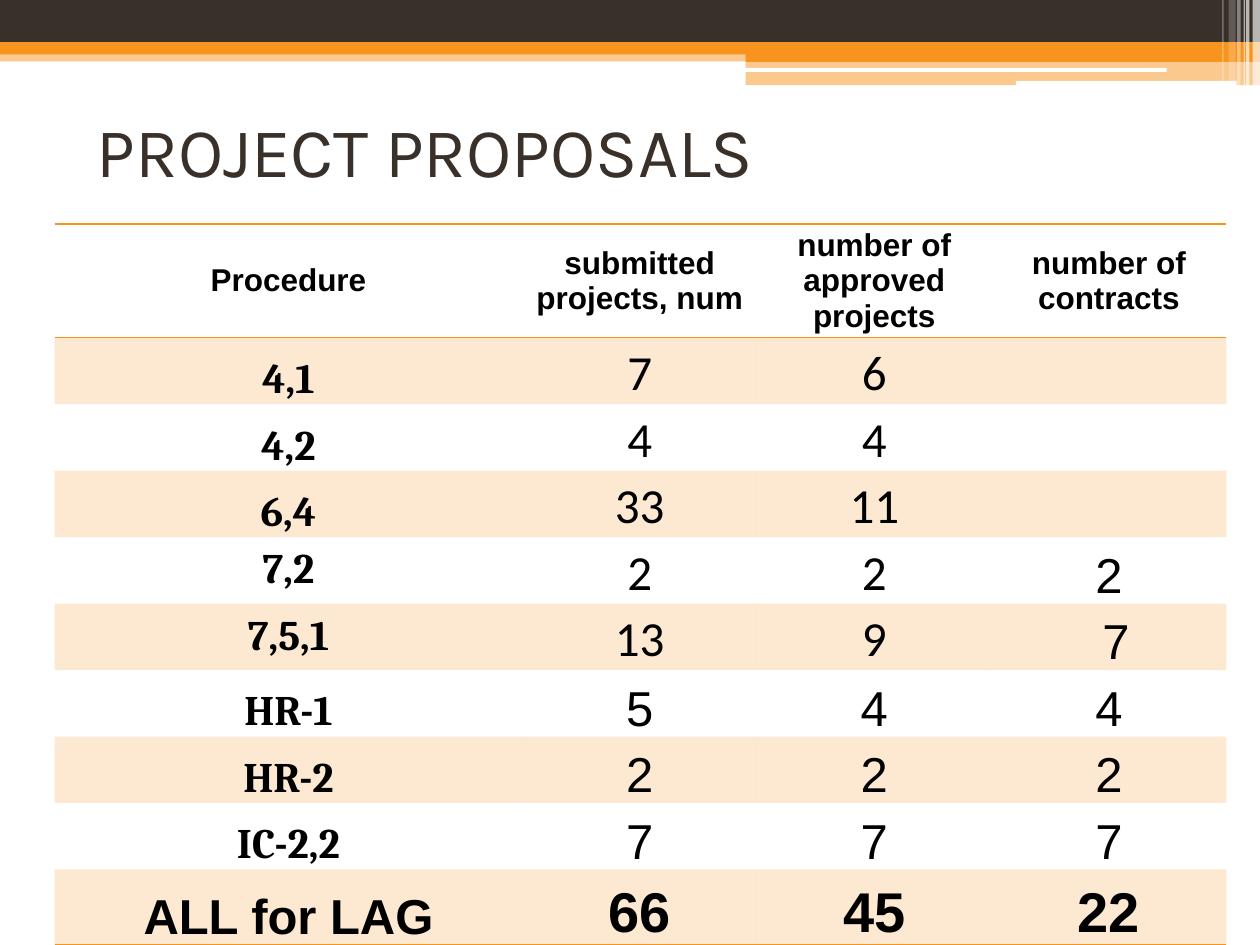
"""Build the project proposals slide with its banner and results table."""
from lxml import etree
from pptx import Presentation
from pptx.dml.color import RGBColor
from pptx.enum.shapes import MSO_SHAPE
from pptx.enum.text import MSO_ANCHOR, PP_ALIGN
from pptx.oxml.ns import qn
from pptx.util import Cm, Pt

RECT, ROUND = MSO_SHAPE.RECTANGLE, MSO_SHAPE.ROUNDED_RECTANGLE
MIDDLE, BOTTOM = MSO_ANCHOR.MIDDLE, MSO_ANCHOR.BOTTOM
CENTER = PP_ALIGN.CENTER
ORANGE = RGBColor(0xF8, 0x93, 0x1D)
BROWN = RGBColor(0x39, 0x30, 0x2A)
WHITE = RGBColor(0xFF, 0xFF, 0xFF)
BLACK = RGBColor(0x00, 0x00, 0x00)
NO_STYLE = "{2D5ABB26-0587-4C30-8999-92F81FD0307C}"


def paint(fill, parent, color, opacity):
    fill.solid()
    fill.fore_color.rgb = color
    if opacity < 100:
        clr = parent.find(qn("a:solidFill"))[0]
        etree.SubElement(clr, qn("a:alpha"), val=str(opacity * 1000))


def add_border(tcPr, position, tag):
    ln = etree.Element(qn(tag), w=str(Pt(1)))
    solid = etree.SubElement(ln, qn("a:solidFill"))
    etree.SubElement(solid, qn("a:srgbClr"), val=str(ORANGE))
    tcPr.insert(position, ln)


prs = Presentation()
prs.slide_width, prs.slide_height = Cm(25.4), Cm(19.05)
s = prs.slides.add_slide(prs.slide_layouts[6])

banner = [
    (RECT, 0, 1.01, 25.4, 0.23, ORANGE, 50),
    (RECT, 0, 0, 25.4, 0.85, BROWN, 100),
    (RECT, 0, 0.85, 25.4, 0.25, ORANGE, 100),
    (RECT, 15.03, 1, 10.37, 0.25, ORANGE, 100),
    (RECT, 15.03, 1.22, 10.37, 0.5, ORANGE, 50),
    (ROUND, 15.01, 1.37, 8.51, 0.08, WHITE, 100),
    (ROUND, 20.48, 1.63, 4.45, 0.1, WHITE, 100),
    (RECT, 25.25, 0, 0.15, 1.73, WHITE, 65),
    (RECT, 25.12, 0, 0.07, 1.73, WHITE, 65),
    (RECT, 25.07, 0, 0.03, 1.73, WHITE, 60),
    (RECT, 24.94, 0, 0.07, 1.73, WHITE, 40),
    (RECT, 24.77, 0, 0.14, 1.63, WHITE, 20),
    (RECT, 24.64, 0, 0.03, 1.63, WHITE, 30),
]
for shape, left, top, width, height, color, opacity in banner:
    sp = s.shapes.add_shape(shape, Cm(left), Cm(top), Cm(width), Cm(height))
    sp.shadow.inherit = False
    sp.line.fill.background()
    paint(sp.fill, sp.fill._xPr, color, opacity)

title = s.shapes.add_textbox(Cm(1.7), Cm(1.93), Cm(22.86), Cm(2.16))
tf = title.text_frame
tf.word_wrap = True
tf.vertical_anchor = MIDDLE
tf.text = "PROJECT PROPOSALS"
font = tf.paragraphs[0].runs[0].font
font.name, font.size, font.color.rgb = "Karla", Pt(40), BROWN

rows = [
    ("Procedure", "submitted projects, num", "number of approved projects", "number of contracts"),
    ("4,1", "7", "6", ""),
    ("4,2", "4", "4", ""),
    ("6,4", "33", "11", ""),
    ("7,2", "2", "2", "2"),
    ("7,5,1", "13", "9", "7"),
    ("HR-1", "5", "4", "4"),
    ("HR-2", "2", "2", "2"),
    ("IC-2,2", "7", "7", "7"),
    ("ALL for LAG", "66", "45", "22"),
]
widths = [9.43] + [4.73] * 3
heights = [1.73] + [1.34] * 8 + [1.52]
last = len(rows) - 1
frame = s.shapes.add_table(len(rows), len(widths), Cm(1.1), Cm(4.52),
                           Cm(sum(widths)), Cm(sum(heights)))
table = frame.table
table.first_row = table.horz_banding = False
table._tbl.tblPr.find(qn("a:tableStyleId")).text = NO_STYLE
for column, width in zip(table.columns, widths):
    column.width = Cm(width)
for row, height in zip(table.rows, heights):
    row.height = Cm(height)

for i, texts in enumerate(rows):
    for j, text in enumerate(texts):
        cell = table.cell(i, j)
        tcPr = cell._tc.get_or_add_tcPr()
        if i % 2:
            paint(cell.fill, tcPr, ORANGE, 20)
        else:
            cell.fill.background()
        if i == 0:
            add_border(tcPr, 0, "a:lnT")
        if i in (0, last):
            add_border(tcPr, i and 0 or 1, "a:lnB")
        if not text:
            continue

        if i == 0:
            name, size = "Arial", 18
        elif i == last:
            name, size = "Arial", 32 if j else 28
        elif j == 0:
            name, size = "Cambria", 24
        else:
            name, size = "Calibri" if i <= 5 and j < 3 else "Arial", 28
        inset = Cm(0.03) if name == "Calibri" else 0
        cell.margin_left = cell.margin_right = cell.margin_top = inset
        cell.margin_bottom = 0
        cell.vertical_anchor = MIDDLE if i == 0 or (j == 0 and i in (4, 5)) else BOTTOM
        cell.text = text
        p = cell.text_frame.paragraphs[0]
        p.alignment = CENTER
        font = p.runs[0].font
        font.name, font.size, font.color.rgb = name, Pt(size), BLACK
        font.bold = i in (0, last) or j == 0
table.cell(5, 3).margin_left = Cm(0.28)

prs.save("out.pptx")
